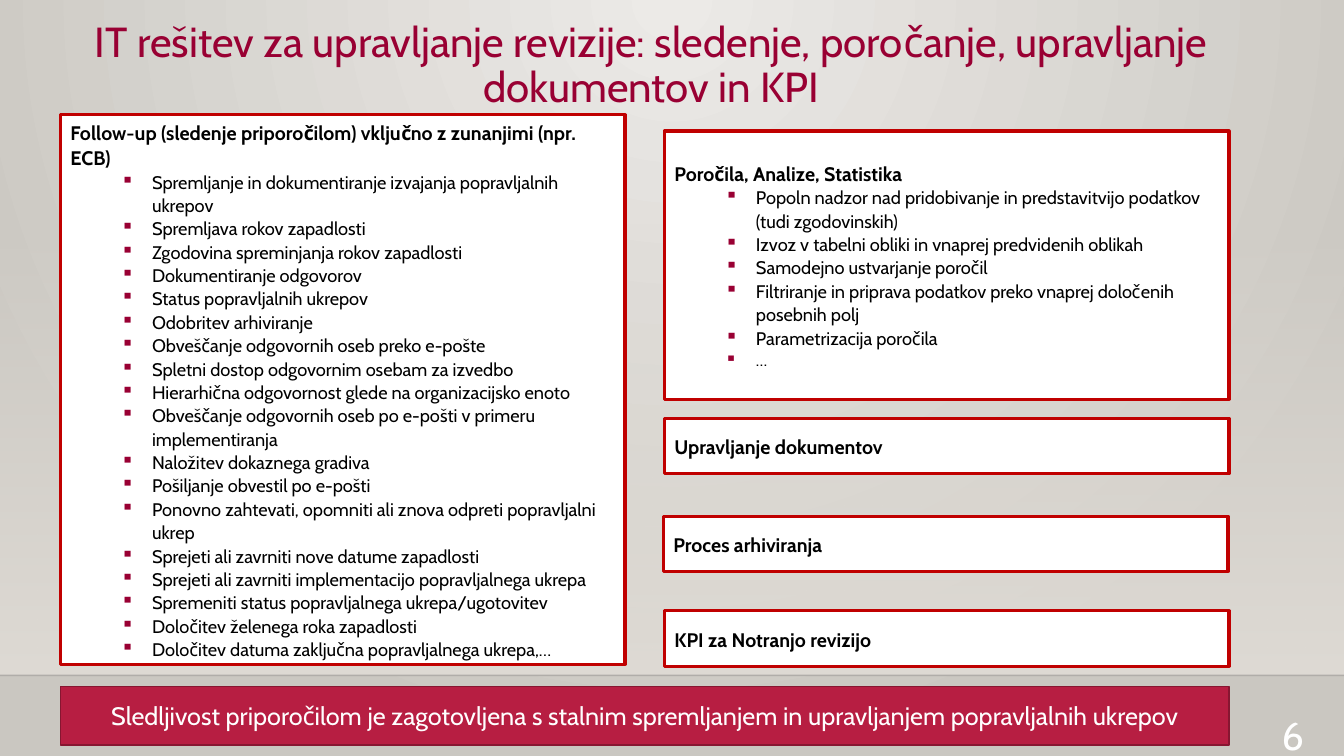
from lxml import etree
from pptx import Presentation, util as u
from pptx.dml.color import RGBColor
from pptx.enum import shapes, text
from pptx.oxml.ns import qn

PX = 9144
WIDTH, HEIGHT = 1333, 750

FOLLOW_UP = [
    "Spremljanje in dokumentiranje izvajanja popravljalnih ukrepov",
    "Spremljava rokov zapadlosti",
    "Zgodovina spreminjanja rokov zapadlosti",
    "Dokumentiranje odgovorov",
    "Status popravljalnih ukrepov",
    "Odobritev arhiviranje",
    "Obveščanje odgovornih oseb preko e-pošte",
    "Spletni dostop odgovornim osebam za izvedbo",
    "Hierarhična odgovornost glede na organizacijsko enoto",
    "Obveščanje odgovornih oseb po e-pošti v primeru implementiranja",
    "Naložitev dokaznega gradiva",
    "Pošiljanje obvestil po e-pošti",
    "Ponovno zahtevati, opomniti ali znova odpreti popravljalni ukrep",
    "Sprejeti ali zavrniti nove datume zapadlosti",
    "Sprejeti ali zavrniti implementacijo popravljalnega ukrepa",
    "Spremeniti status popravljalnega ukrepa/ugotovitev",
    "Določitev želenega roka zapadlosti",
    "Določitev datuma zaključna popravljalnega ukrepa,…",
]
REPORTS = [
    "Popoln nadzor nad pridobivanje in predstavitvijo podatkov (tudi zgodovinskih)",
    "Izvoz v tabelni obliki in vnaprej predvidenih oblikah",
    "Samodejno ustvarjanje poročil",
    "Filtriranje in priprava podatkov preko vnaprej določenih posebnih polj",
    "Parametrizacija poročila",
    "…",
]


def px(value):
    return u.Emu(value * PX)


def rgb(value):
    return RGBColor.from_string(value)


def set_alpha(color_element, percent):
    etree.SubElement(color_element, qn("a:alpha"), val=str(percent * 1000))


class AuditSlide:
    font_name = "Cabin"
    accent = "990033"
    border = "C00000"

    def __init__(self, presentation):
        self.slide = presentation.slides.add_slide(presentation.slide_layouts[6])

    def gradient(self, fill, start, end):
        fill.gradient()
        for stop, color in zip(fill.gradient_stops, (start, end)):
            stop.color.rgb = rgb(color)

    def background(self, inner, outer):
        self.gradient(self.slide.background.fill, inner, outer)
        linear = next(self.slide.element.iter(qn("a:lin")))
        circle = etree.Element(qn("a:path"), path="circle")
        etree.SubElement(circle, qn("a:fillToRect"), l="43000", t="0", r="43000", b="100000")
        linear.getparent().replace(linear, circle)

    def rectangle(self, box):
        shape = self.slide.shapes.add_shape(shapes.MSO_SHAPE.RECTANGLE, *map(px, box))
        shape.shadow.inherit = False
        return shape

    def fade(self, box, color):
        shape = self.rectangle(box)
        self.gradient(shape.fill, color, color)
        shape.fill.gradient_angle = 270
        shape.line.fill.background()
        set_alpha(next(shape.element.spPr.iter(qn("a:srgbClr"))), 0)

    def rule(self, y):
        line = self.slide.shapes.add_connector(
            shapes.MSO_CONNECTOR.STRAIGHT, px(0), px(y), px(WIDTH), px(y))
        line.line.width = u.Pt(1)
        line.line.color.rgb = rgb("000001")
        properties = line.element.spPr
        set_alpha(next(properties.iter(qn("a:srgbClr"))), 20)
        etree.SubElement(properties, qn("a:effectLst"))

    def set_text(self, paragraph, words, size, color, align, spacing=1.0, bold=False):
        paragraph.text = words
        paragraph.alignment = align
        paragraph.line_spacing = spacing
        font = paragraph.font
        font.name, font.size, font.bold = self.font_name, u.Pt(size), bold
        font.color.rgb = rgb(color)

    def label(self, box, words, size, color, align, spacing=1.0):
        frame = self.slide.shapes.add_textbox(*map(px, box)).text_frame
        frame.word_wrap = True
        self.set_text(frame.paragraphs[0], words, size, color, align, spacing)

    def filled(self, box, fill, line, width):
        shape = self.rectangle(box)
        shape.fill.solid()
        shape.fill.fore_color.rgb = rgb(fill)
        shape.line.color.rgb = rgb(line)
        shape.line.width = u.Pt(width)
        frame = shape.text_frame
        frame.word_wrap = True
        frame.vertical_anchor = text.MSO_ANCHOR.MIDDLE
        return frame

    def banner(self, box, words):
        frame = self.filled(box, "B71E42", "871631", 1.25)
        self.set_text(frame.paragraphs[0], words, 18, "FFFFFF", text.PP_ALIGN.CENTER)

    def bullet(self, paragraph):
        paragraph.level = 1
        properties = paragraph._p.get_or_add_pPr()
        properties.set("marL", str(px(81)))
        properties.set("indent", str(px(-31)))
        color = etree.SubElement(properties, qn("a:buClr"))
        etree.SubElement(color, qn("a:srgbClr"), val=self.accent)
        etree.SubElement(properties, qn("a:buChar"), char="▪")

    def panel(self, box, heading, items=()):
        frame = self.filled(box, "FFFFFF", self.border, 2.25)
        left = text.PP_ALIGN.LEFT
        self.set_text(frame.paragraphs[0], heading, 14, "000000", left, 1.07, True)
        for item in items:
            paragraph = frame.add_paragraph()
            self.bullet(paragraph)
            size = 12 if item == "…" else 13
            self.set_text(paragraph, item, size, "000000", left, 1.07)


def main():
    presentation = Presentation()
    presentation.slide_width, presentation.slide_height = px(WIDTH), px(HEIGHT)
    page = AuditSlide(presentation)
    page.background("ECEAE7", "CAC7C1")
    page.fade((0, 221, WIDTH, 449), "DFDBD5")
    page.rule(670)
    page.label((0, 16, 1292, 66),
               "IT rešitev za upravljanje revizije: sledenje, poročanje, "
               "upravljanje dokumentov in KPI",
               30, page.accent, text.PP_ALIGN.CENTER, 0.9)
    page.label((1254, 701, 49, 34), "6", 28, "FFFFFF", text.PP_ALIGN.RIGHT)
    page.panel((60, 114, 560, 545),
               "Follow-up (sledenje priporočilom) vključno z zunanjimi (npr. ECB)", FOLLOW_UP)
    page.banner((60, 681, 1159, 58),
                "Sledljivost priporočilom je zagotovljena s stalnim spremljanjem "
                "in upravljanjem popravljalnih ukrepov")
    page.panel((659, 130, 560, 266), "Poročila, Analize, Statistika", REPORTS)
    for left, top, heading in (
        (659, 415, "Upravljanje dokumentov"),
        (658, 512, "Proces arhiviranja"),
        (659, 606, "KPI za Notranjo revizijo"),
    ):
        page.panel((left, top, 560, 55), heading)
    presentation.save("out.pptx")


if __name__ == "__main__":
    main()
